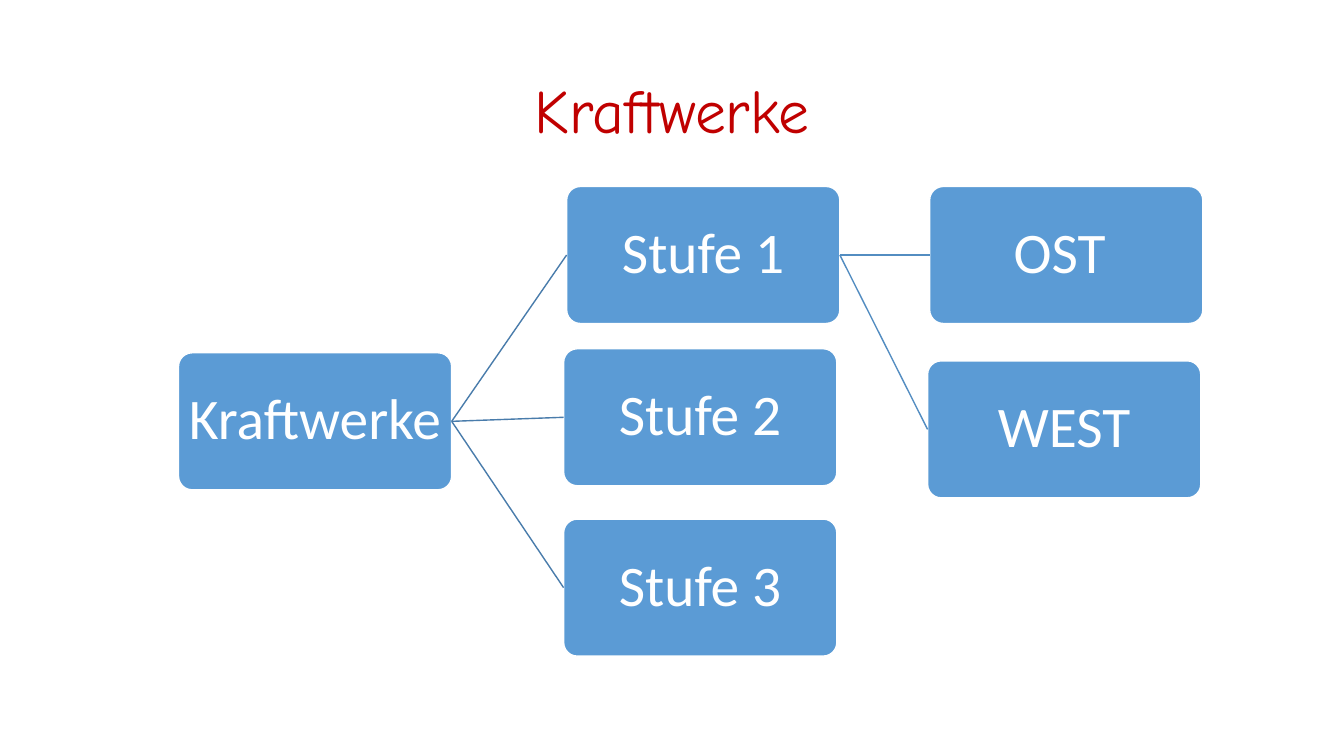
from pptx import Presentation
from pptx.dml.color import RGBColor
from pptx.enum.shapes import MSO_CONNECTOR, MSO_SHAPE
from pptx.enum.text import MSO_ANCHOR, PP_ALIGN
from pptx.oxml.ns import qn
from pptx.util import Inches, Pt
from lxml.etree import SubElement

# Content: box key -> (label, left, top)
TITLE = "Kraftwerke"
BOXES = {
    "root": ("Kraftwerke", 1.77, 3.5),
    "stage 1": ("Stufe 1", 5.62, 1.85),
    "stage 2": ("Stufe 2", 5.59, 3.46),
    "stage 3": ("Stufe 3", 5.59, 5.15),
    "east": ("OST ", 9.22, 1.85),
    "west": ("WEST", 9.2, 3.58),
}
# Parent, children, line colour
BRANCHES = [
    ("root", ["stage 2", "stage 1", "stage 3"], "497CAB"),
    ("stage 1", ["east", "west"], "538DC1"),
]
BOX_WIDTH, BOX_HEIGHT = 2.71, 1.36
LEFT_SITE, RIGHT_SITE = 1, 3


def color(hex_code):
    return RGBColor.from_string(hex_code)


def write_text(shape, text, size, font, hex_code, inset):
    frame = shape.text_frame
    frame.word_wrap = True
    frame.vertical_anchor = MSO_ANCHOR.MIDDLE
    frame.margin_left = frame.margin_right = Inches(inset)
    frame.margin_top = frame.margin_bottom = Inches(inset)
    paragraph = frame.paragraphs[0]
    paragraph.alignment = PP_ALIGN.CENTER
    paragraph.line_spacing = 0.9
    run = paragraph.add_run()
    run.text = text
    run.font.size = Pt(size)
    run.font.name = font
    run.font.color.rgb = color(hex_code)


def add_box(slide, label, left, top):
    box = slide.shapes.add_shape(
        MSO_SHAPE.ROUNDED_RECTANGLE,
        Inches(left), Inches(top), Inches(BOX_WIDTH), Inches(BOX_HEIGHT))
    box.adjustments[0] = 0.1
    box.shadow.inherit = False
    box.fill.solid()
    box.fill.fore_color.rgb = color("5B9BD5")
    box.line.color.rgb = color("FFFFFF")
    box.line.width = Pt(1)
    write_text(box, label, size=41, font="Calibri", hex_code="FFFFFF", inset=0.03)
    return box


def connect(slide, parent, child, hex_code):
    connector = slide.shapes.add_connector(MSO_CONNECTOR.STRAIGHT, 0, 0, 0, 0)
    connector.begin_connect(parent, RIGHT_SITE)
    connector.end_connect(child, LEFT_SITE)
    connector.line.color.rgb = color(hex_code)
    connector.line.width = Pt(1)
    SubElement(connector._element.spPr, qn("a:effectLst"))


def main():
    presentation = Presentation()
    presentation.slide_width = Inches(13.33)
    presentation.slide_height = Inches(7.5)
    slide = presentation.slides.add_slide(presentation.slide_layouts[6])

    # Title
    title = slide.shapes.add_textbox(Inches(0.92), Inches(0.4), Inches(11.5), Inches(1.45))
    write_text(title, TITLE, size=44, font="Comic Neue", hex_code="C00000", inset=0.05)

    # Tree of boxes and the lines between them
    boxes = {key: add_box(slide, *box) for key, box in BOXES.items()}
    for parent, children, hex_code in BRANCHES:
        for child in children:
            connect(slide, boxes[parent], boxes[child], hex_code)

    presentation.save("out.pptx")


if __name__ == "__main__":
    main()
